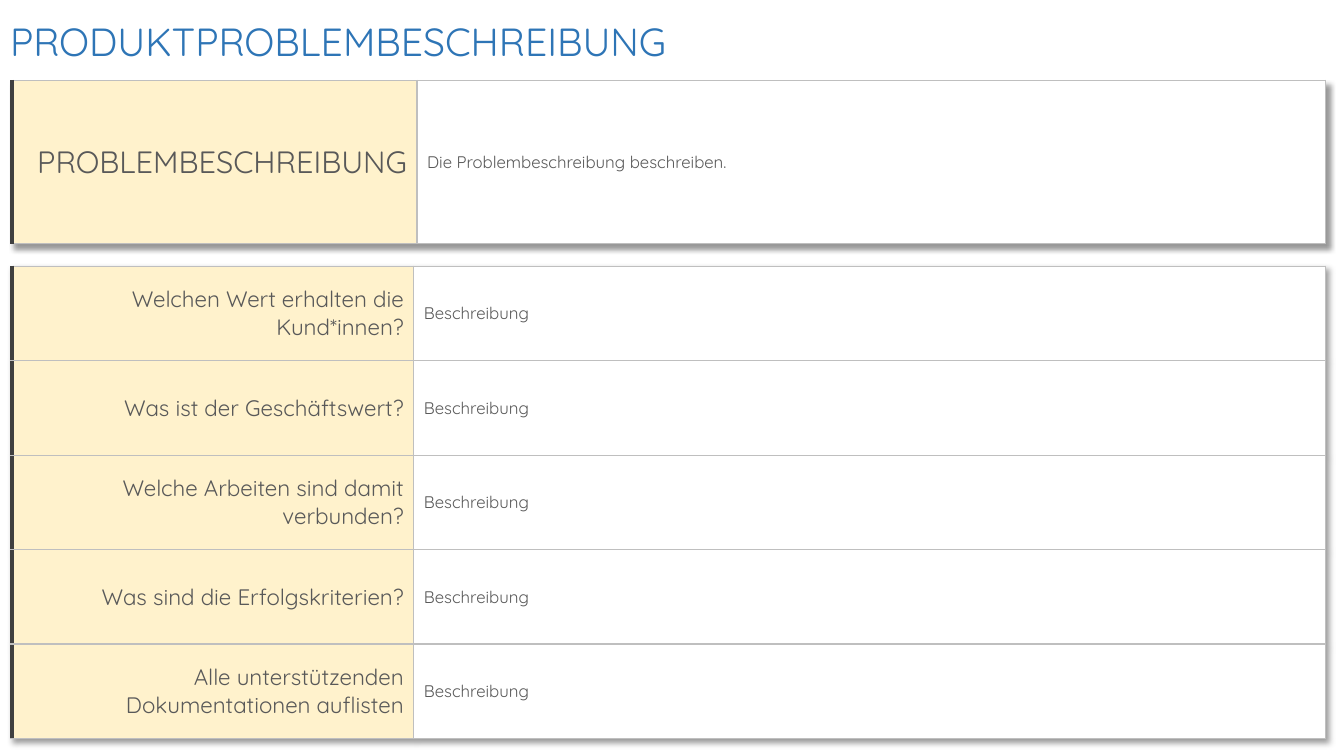
from dataclasses import dataclass

from lxml.etree import SubElement
from pptx import Presentation
from pptx.dml.color import RGBColor
from pptx.enum.text import MSO_ANCHOR as Anchor, MSO_AUTO_SIZE as AutoSize, PP_ALIGN as Align
from pptx.oxml import parse_xml
from pptx.oxml.ns import nsdecls, qn
from pptx.util import Cm, Pt


@dataclass(frozen=True)
class Theme:
    font: str = "Quicksand"
    title: str = "2E75B6"
    text: str = "595959"
    label_fill: str = "FFF2CC"
    answer_fill: str = "FFFFFF"
    accent: str = "404040"
    grid: str = "BFBFBF"
    title_size: int = 28
    problem_size: int = 22
    question_size: int = 16
    answer_size: int = 12


THEME = Theme()

QUESTIONS = [
    "Welchen Wert erhalten die Kund*innen?",
    "Was ist der Geschäftswert?",
    "Welche Arbeiten sind damit verbunden?",
    "Was sind die Erfolgskriterien?",
    "Alle unterstützenden Dokumentationen auflisten",
]


def format_text(paragraph, size, color, align):
    paragraph.alignment = align
    paragraph.font.name = THEME.font
    paragraph.font.size = Pt(size)
    paragraph.font.color.rgb = RGBColor.from_string(color)


def add_border(cell, side, color, width):
    line = SubElement(cell._tc.get_or_add_tcPr(), qn(f"a:ln{side}"), w=str(Pt(width)))
    fill = SubElement(line, qn("a:solidFill"))
    SubElement(fill, qn("a:srgbClr"), val=color)


def fill_cell(cell, text, size, fill, align, left_border):
    cell.text = text
    cell.vertical_anchor = Anchor.MIDDLE
    format_text(cell.text_frame.paragraphs[0], size, THEME.text, align)
    add_border(cell, "L", *left_border)
    for side in "RTB":
        add_border(cell, side, THEME.grid, 1)
    cell.fill.solid()
    cell.fill.fore_color.rgb = RGBColor.from_string(fill)


def add_table_shadow(table):
    table._tbl.tblPr.insert(0, parse_xml(
        f'<a:effectLst {nsdecls("a")}>'
        '<a:outerShdw blurRad="50800" dist="38100" dir="2700000" algn="tl" rotWithShape="0">'
        '<a:srgbClr val="000000"><a:alpha val="40000"/></a:srgbClr>'
        '</a:outerShdw></a:effectLst>'))


def add_title(slide, left, top, width, height):
    title = slide.shapes.title
    title.left, title.top, title.width, title.height = left, top, width, height
    title.text = "PRODUKTPROBLEMBESCHREIBUNG"
    title.text_frame.vertical_anchor = Anchor.TOP
    title.text_frame.auto_size = AutoSize.SHAPE_TO_FIT_TEXT
    format_text(title.text_frame.paragraphs[0], THEME.title_size, THEME.title, Align.LEFT)


def add_answer_table(slide, left, top, width, height, label_width, entries, label_size):
    """Place labels on the left and their answers on the right of the box."""
    table = slide.shapes.add_table(len(entries), 2, left, top, width, height).table
    table.first_row = table.horz_banding = False
    table.columns[0].width = label_width
    table.columns[1].width = width - label_width
    for row, (label, answer) in enumerate(entries):
        fill_cell(table.cell(row, 0), label, label_size, THEME.label_fill,
                  Align.RIGHT, (THEME.accent, 3))
        fill_cell(table.cell(row, 1), answer, THEME.answer_size, THEME.answer_fill,
                  Align.LEFT, (THEME.grid, 1))
    add_table_shadow(table)


def main():
    prs = Presentation()
    prs.slide_width, prs.slide_height = Cm(33.87), Cm(19.05)
    slide = prs.slides.add_slide(prs.slide_layouts[5])

    # Heading
    add_title(slide, Cm(0), Cm(0.3), prs.slide_width, Cm(1.45))

    # Problem statement
    left, width = Cm(0.3), Cm(33.1)
    add_answer_table(slide, left, Cm(2.03), width, Cm(4.1), Cm(10.21),
                     [("PROBLEMBESCHREIBUNG", "Die Problembeschreibung beschreiben.")],
                     THEME.problem_size)

    # Follow-up questions
    add_answer_table(slide, left, Cm(6.71), width, Cm(11.9), Cm(10.13),
                     [(question, "Beschreibung") for question in QUESTIONS],
                     THEME.question_size)

    prs.save("out.pptx")


if __name__ == "__main__":
    main()
